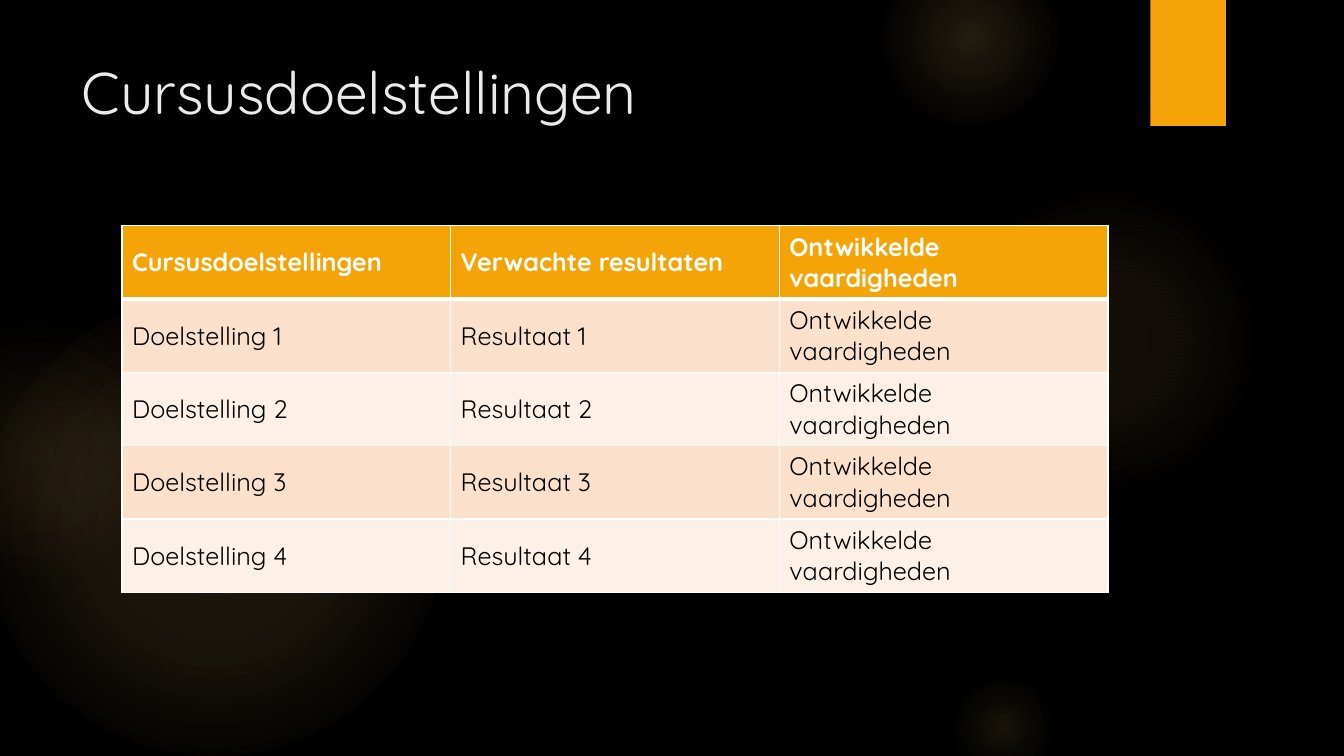
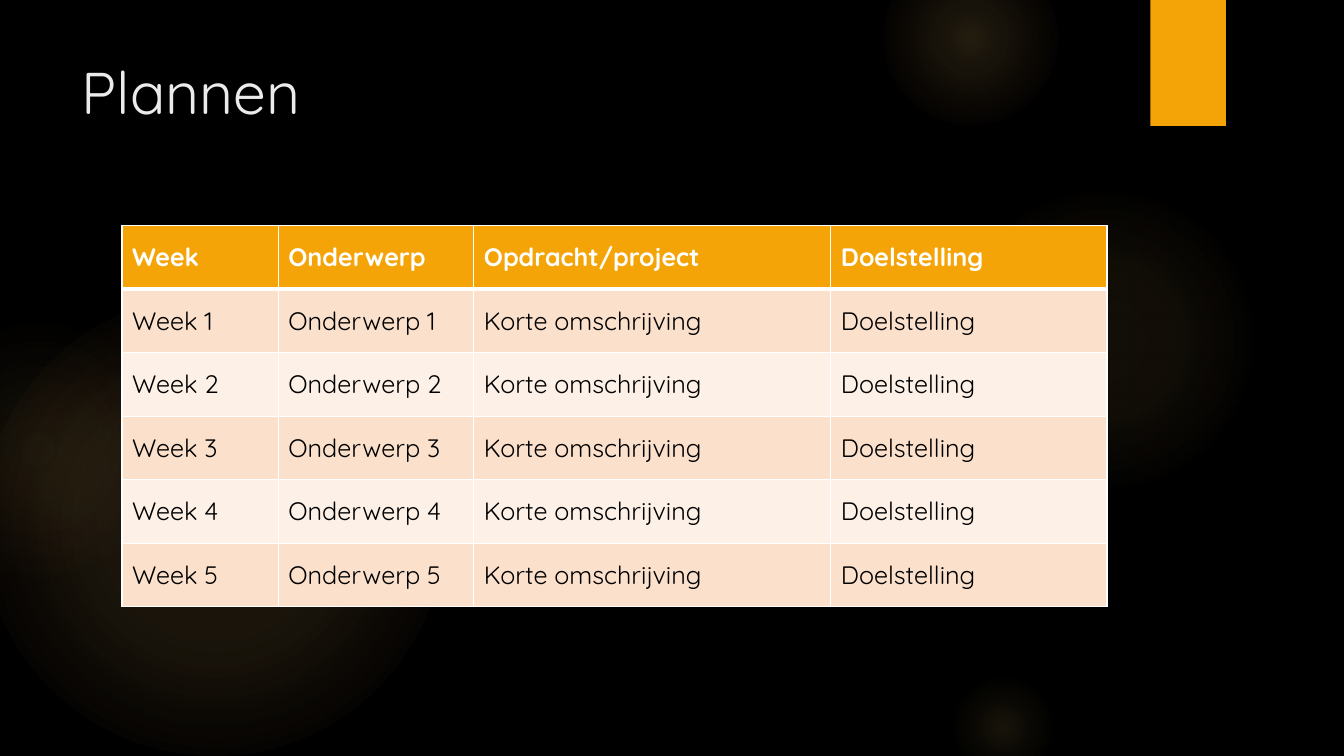
from dataclasses import dataclass

from lxml import etree
from pptx import Presentation
from pptx.dml.color import RGBColor
from pptx.enum.shapes import MSO_SHAPE
from pptx.enum.text import MSO_ANCHOR, MSO_AUTO_SIZE, PP_ALIGN
from pptx.oxml import parse_xml
from pptx.oxml.ns import nsdecls, qn
from pptx.slide import Slide, SlideLayout
from pptx.text.text import TextFrame
from pptx.util import Inches, Pt

OVAL = MSO_SHAPE.OVAL
RECT = MSO_SHAPE.RECTANGLE
TOP = MSO_ANCHOR.TOP
MIDDLE = MSO_ANCHOR.MIDDLE
LEFT = PP_ALIGN.LEFT
NO_FIT = MSO_AUTO_SIZE.NONE

BLACK = RGBColor(0x00, 0x00, 0x00)
WHITE = RGBColor(0xFF, 0xFF, 0xFF)
PALE = RGBColor(0xEB, 0xEB, 0xEB)
ORANGE = RGBColor(0xF5, 0xA4, 0x08)
GOLD = RGBColor(0xFA, 0xC9, 0x6A)
CORAL = RGBColor(0xF5, 0x9B, 0x74)
PEACH = RGBColor(0xFB, 0xE0, 0xCC)
CREAM = RGBColor(0xFD, 0xF0, 0xE7)

FONT = "Quicksand"
ROW = 0.63
THIN, THICK = 1, 3


@dataclass(frozen=True)
class Glow:
    """A round light; stops are (position, opacity) in percent."""
    left: float
    top: float
    size: float
    stops: tuple[tuple[int, int], ...]
    edge: RGBColor = GOLD


@dataclass(frozen=True)
class Page:
    title: str
    widths: list[float]
    rows: list[list[str]]


GLOWS = [
    Glow(-0.17, 2.92, 4.58, ((0, 11), (36, 10), (75, 0))),
    Glow(-0.92, 3.17, 2.58, ((0, 8), (36, 5), (71, 0)), CORAL),
    Glow(9.41, 1.83, 3.08, ((0, 7), (36, 6), (69, 0))),
    Glow(8.75, -0.5, 1.75, ((0, 14), (36, 7), (73, 0))),
    Glow(9.41, 6.67, 1.08, ((0, 10), (31, 5), (66, 0))),
]

SKILLS = "Ontwikkelde vaardigheden"
PAGES = [
    Page(
        "Cursusdoelstellingen",
        [3.26] * 3,
        [["Cursusdoelstellingen", "Verwachte resultaten", SKILLS]]
        + [[f"Doelstelling {n}", f"Resultaat {n}", SKILLS] for n in range(1, 5)],
    ),
    Page(
        "Plannen",
        [1.55, 1.94, 3.54, 2.74],
        [["Week", "Onderwerp", "Opdracht/project", "Doelstelling"]]
        + [[f"Week {n}", f"Onderwerp {n}", "Korte omschrijving", "Doelstelling"]
           for n in range(1, 6)],
    ),
]


def set_text(frame: TextFrame, text: str, size: int, color: RGBColor,
             bold: bool = False) -> None:
    frame.text = text
    para = frame.paragraphs[0]
    para.alignment = LEFT
    for run in para.runs:
        run.font.name = FONT
        run.font.size = Pt(size)
        run.font.bold = bold
        run.font.color.rgb = color


def add_glow(slide: Slide, glow: Glow):
    size = Inches(glow.size)
    shape = slide.shapes.add_shape(
        OVAL, Inches(glow.left), Inches(glow.top), size, size)
    shape.shadow.inherit = False
    shape.fill.background()
    last = glow.stops[-1]
    stops = "".join(
        f'<a:gs pos="{pos * 1000}">'
        f'<a:srgbClr val="{glow.edge if (pos, alpha) == last else GOLD}">'
        f'<a:alpha val="{alpha * 1000}"/></a:srgbClr></a:gs>'
        for pos, alpha in glow.stops)
    grad = parse_xml(
        f'<a:gradFill {nsdecls("a")} rotWithShape="1"><a:gsLst>{stops}</a:gsLst>'
        '<a:path path="circle"><a:fillToRect l="50000" t="50000" r="50000" '
        'b="50000"/></a:path></a:gradFill>')
    props = shape.element.spPr
    props.replace(props.find(qn("a:noFill")), grad)
    shape.line.fill.background()
    return shape


def add_tab(slide: Slide):
    shape = slide.shapes.add_shape(
        RECT, Inches(11.41), Inches(0), Inches(0.75), Inches(1.25))
    shape.fill.solid()
    shape.fill.fore_color.rgb = ORANGE
    shape.line.fill.background()
    shape.shadow.inherit = False
    shadow = parse_xml(
        f'<a:outerShdw {nsdecls("a")} blurRad="{Pt(3)}" dist="{Pt(2)}" '
        f'dir="5400000"><a:srgbClr val="{BLACK}"><a:alpha val="45000"/>'
        '</a:srgbClr></a:outerShdw>')
    shape.element.spPr.find(qn("a:effectLst")).append(shadow)
    return shape


def dress(layout: SlideLayout, slide: Slide) -> None:
    """Give the layout its background, glows and tab, drawn via one slide."""
    fill = layout.background.fill
    fill.solid()
    fill.fore_color.rgb = BLACK
    tree = layout.shapes.element
    for holder in list(layout.placeholders)[1:]:
        tree.remove(holder.element)
    for shape in [add_glow(slide, glow) for glow in GLOWS] + [add_tab(slide)]:
        tree.append(shape.element)


def set_title(slide: Slide, text: str) -> None:
    title = slide.shapes.title
    title.left, title.top = Inches(0.71), Inches(0.5)
    title.width, title.height = Inches(10.29), Inches(1.53)
    frame = title.text_frame
    set_text(frame, text, 42, PALE)
    frame.word_wrap = True
    frame.auto_size = NO_FIT
    frame.vertical_anchor = TOP


def set_edges(cell, row: int) -> None:
    """Draw white borders, with a thick rule below the header."""
    props = cell._tc.get_or_add_tcPr()
    edges = {"L": THIN, "R": THIN,
             "T": THICK if row == 1 else THIN,
             "B": THICK if row == 0 else THIN}
    for side, width in edges.items():
        line = etree.SubElement(props, qn(f"a:ln{side}"), w=str(Pt(width)))
        fill = etree.SubElement(line, qn("a:solidFill"))
        etree.SubElement(fill, qn("a:srgbClr"), val=str(WHITE))


def add_grid(slide: Slide, page: Page) -> None:
    table = slide.shapes.add_table(
        len(page.rows), len(page.widths), Inches(1.21), Inches(2.24),
        Inches(sum(page.widths)), Inches(ROW * len(page.rows))).table
    for column, width in zip(table.columns, page.widths):
        column.width = Inches(width)
    for r, texts in enumerate(page.rows):
        table.rows[r].height = Inches(ROW)
        head = r == 0
        for c, text in enumerate(texts):
            cell = table.cell(r, c)
            set_edges(cell, r)
            cell.fill.solid()
            cell.fill.fore_color.rgb = ORANGE if head else PEACH if r % 2 else CREAM
            cell.vertical_anchor = MIDDLE
            set_text(cell.text_frame, text, 18, WHITE if head else BLACK, head)


def main() -> None:
    deck = Presentation()
    deck.slide_width, deck.slide_height = Inches(13.33), Inches(7.5)
    layout = deck.slide_layouts[5]  # title only
    slides = [deck.slides.add_slide(layout) for _ in PAGES]
    dress(layout, slides[0])
    for slide, page in zip(slides, PAGES):
        set_title(slide, page.title)
        add_grid(slide, page)
    deck.save("out.pptx")


if __name__ == "__main__":
    main()
